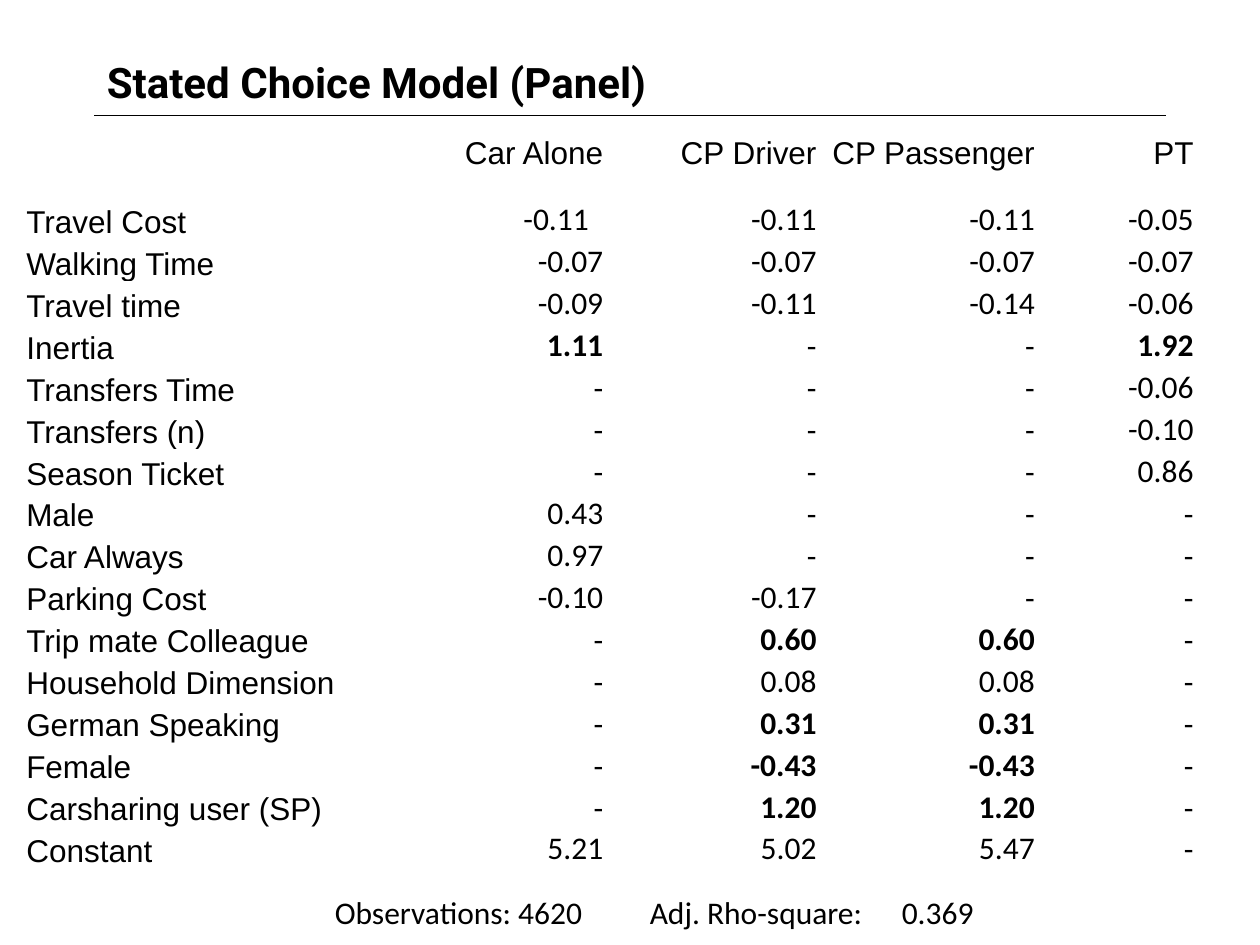
from lxml import etree
from pptx import Presentation
from pptx import util as u
from pptx.dml.color import RGBColor
from pptx.enum import shapes, text
from pptx.oxml.ns import qn

COLORS = {"ink": "000000"}
HEADINGS = ["", "Car Alone", "CP Driver", "CP Passenger", "PT"]
COEFFICIENTS = [
    ["Travel Cost", "-0.11", "-0.11", "-0.11", "-0.05"],
    ["Walking Time", "-0.07", "-0.07", "-0.07", "-0.07"],
    ["Travel time", "-0.09", "-0.11", "-0.14", "-0.06"],
    ["Inertia", "1.11", "-", "-", "1.92"],
    ["Transfers Time", "-", "-", "-", "-0.06"],
    ["Transfers (n)", "-", "-", "-", "-0.10"],
    ["Season Ticket", "-", "-", "-", "0.86"],
    ["Male", "0.43", "-", "-", "-"],
    ["Car Always", "0.97", "-", "-", "-"],
    ["Parking Cost", "-0.10", "-0.17", "-", "-"],
    ["Trip mate Colleague", "-", "0.60", "0.60", "-"],
    ["Household Dimension", "-", "0.08", "0.08", "-"],
    ["German Speaking", "-", "0.31", "0.31", "-"],
    ["Female", "-", "-0.43", "-0.43", "-"],
    ["Carsharing user (SP)", "-", "1.20", "1.20", "-"],
    ["Constant", "5.21", "5.02", "5.47", "-"],
]
BOLD_ROWS = {"Inertia", "Trip mate Colleague", "German Speaking", "Female",
             "Carsharing user (SP)"}
COLUMN_WIDTHS = [7.4, 4.29, 4.3, 4.4, 3.2]
HEADER_HEIGHT, TABLE_HEIGHT = 1.27, 14.81


class SlideBuilder:
    def __init__(self, slide):
        self.slide = slide
        self.ink = RGBColor.from_string(COLORS["ink"])

    def style(self, paragraph, font_name, size=18, bold=False,
              align=text.PP_ALIGN.LEFT):
        paragraph.alignment = align
        font = paragraph.font
        font.name, font.size, font.bold = font_name, u.Pt(size), bold
        font.color.rgb = self.ink

    def title(self, words, left, top, width, height):
        title = self.slide.shapes.title
        title.left, title.top = u.Cm(left), u.Cm(top)
        title.width, title.height = u.Cm(width), u.Cm(height)
        frame = title.text_frame
        frame.text = words
        frame.auto_size = text.MSO_AUTO_SIZE.NONE
        frame.vertical_anchor = text.MSO_ANCHOR.MIDDLE
        self.style(frame.paragraphs[0], "Roboto", 24, True)

    def rule(self, left, right, top):
        line = self.slide.shapes.add_connector(
            shapes.MSO_CONNECTOR.STRAIGHT,
            u.Cm(left), u.Cm(top), u.Cm(right), u.Cm(top))
        line.line.color.rgb = self.ink
        line.line.width = u.Pt(0.75)
        etree.SubElement(line._element.spPr, qn("a:effectLst"))

    def cell(self, cell, words, font_name, bold, align, anchor):
        cell.fill.background()
        cell.margin_left = cell.margin_right = cell.margin_top = u.Cm(0.03)
        cell.margin_bottom = 0
        cell.vertical_anchor = anchor
        cell.text = words
        self.style(cell.text_frame.paragraphs[0], font_name, 18, bold, align)

    def coefficient_table(self, left, top):
        rows = [HEADINGS] + COEFFICIENTS
        table = self.slide.shapes.add_table(
            len(rows), len(HEADINGS), u.Cm(left), u.Cm(top),
            u.Cm(sum(COLUMN_WIDTHS)), u.Cm(TABLE_HEIGHT)).table
        table.first_row = table.horz_banding = False
        for column, width in zip(table.columns, COLUMN_WIDTHS):
            column.width = u.Cm(width)
        row_height = (TABLE_HEIGHT - HEADER_HEIGHT) / len(COEFFICIENTS)
        for r, values in enumerate(rows):
            table.rows[r].height = u.Cm(row_height if r else HEADER_HEIGHT)
            for c, words in enumerate(values):
                is_value = r > 0 and c > 0
                if r == 0:
                    anchor = text.MSO_ANCHOR.TOP
                elif c == 0 or words == "-":
                    anchor = text.MSO_ANCHOR.BOTTOM
                else:
                    anchor = text.MSO_ANCHOR.MIDDLE
                self.cell(
                    table.cell(r, c), words,
                    "Calibri" if is_value else "Arial",
                    is_value and values[0] in BOLD_ROWS and words != "-",
                    text.PP_ALIGN.RIGHT if c else text.PP_ALIGN.LEFT, anchor)
        # The first car coefficient stands slightly left of its column edge.
        table.cell(1, 1).margin_right = u.Cm(0.32)

    def text_box(self, words, left, top, width, height):
        frame = self.slide.shapes.add_textbox(
            u.Cm(left), u.Cm(top), u.Cm(width), u.Cm(height)).text_frame
        frame.word_wrap = True
        frame.auto_size = text.MSO_AUTO_SIZE.SHAPE_TO_FIT_TEXT
        frame.text = words
        self.style(frame.paragraphs[0], "Calibri")


def main():
    presentation = Presentation()
    presentation.slide_width, presentation.slide_height = u.Cm(25.4), u.Cm(19.05)
    title_only = presentation.slide_layouts[5]
    builder = SlideBuilder(presentation.slides.add_slide(title_only))
    builder.rule(1.9, 23.5, 2.33)
    builder.title("Stated Choice Model (Panel)", 1.9, 0.92, 21.6, 1.47)
    builder.coefficient_table(0.5, 2.72)
    builder.text_box("Observations: 4620\t\tAdj. Rho-square:\t0.369",
                     6.5, 17.88, 15, 1.02)
    presentation.save("out.pptx")


if __name__ == "__main__":
    main()
